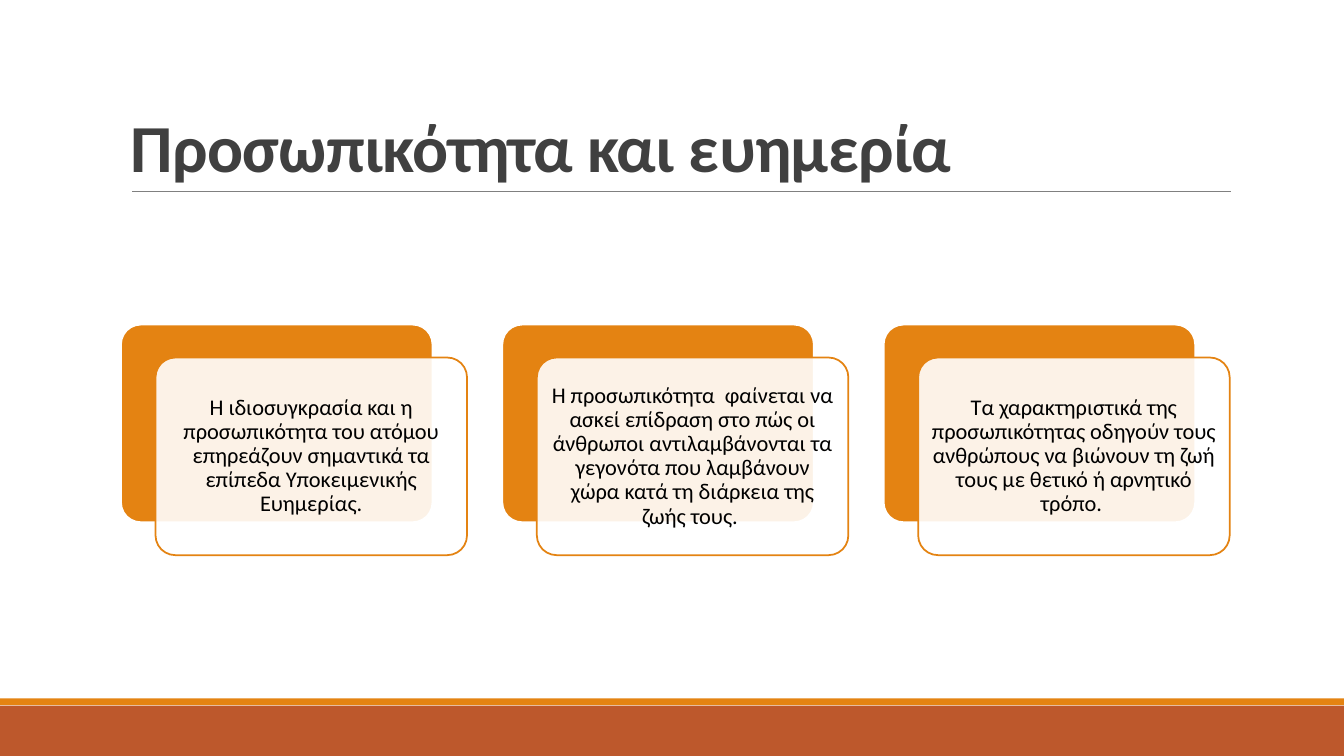
from pptx import Presentation
from pptx.dml.color import RGBColor
from pptx.enum.shapes import MSO_CONNECTOR, MSO_SHAPE
from pptx.enum.text import MSO_ANCHOR, PP_ALIGN
from pptx.oxml.ns import qn
from pptx.util import Cm, Pt
from lxml import etree

RECT, ROUND = MSO_SHAPE.RECTANGLE, MSO_SHAPE.ROUNDED_RECTANGLE
LINE = MSO_CONNECTOR.STRAIGHT
MIDDLE, BOTTOM = MSO_ANCHOR.MIDDLE, MSO_ANCHOR.BOTTOM
CENTER = PP_ALIGN.CENTER
ORANGE, RUST, WHITE = "E48312", "BD582C", "FFFFFF"


def paint(part, color):
    part.fill.solid()
    part.fill.fore_color.rgb = RGBColor.from_string(color)


def add_box(kind, left, top, width, height, fill, edge=None):
    box = slide.shapes.add_shape(kind, Cm(left), Cm(top), Cm(width), Cm(height))
    box.shadow.inherit = False
    paint(box, fill)
    if edge:
        paint(box.line, edge)
        box.line.width = Pt(1.25)
    else:
        box.line.fill.background()
    if kind == ROUND:
        box.adjustments[0] = 0.1
    return box


deck = Presentation()
deck.slide_width, deck.slide_height = Cm(33.87), Cm(19.05)
slide = deck.slides.add_slide(deck.slide_layouts[6])

# Footer bands
add_box(RECT, 0, 17.78, 33.87, 1.27, RUST)
add_box(RECT, 0, 17.6, 33.87, 0.17, ORANGE)

# Rule under the title
rule = slide.shapes.add_connector(LINE, Cm(3.33), Cm(4.83), Cm(31.01), Cm(4.83))
paint(rule.line, "808080")
rule.line.width = Pt(0.5)
etree.SubElement(rule.element.spPr, qn("a:effectLst"))

# Title
title = slide.shapes.add_textbox(Cm(3.05), Cm(0.79), Cm(27.94), Cm(4.04))
frame = title.text_frame
frame.word_wrap = True
frame.vertical_anchor = BOTTOM
para = frame.paragraphs[0]
para.line_spacing = 0.85
run = para.add_run()
run.text = "Προσωπικότητα και ευημερία"
run.font.name = "Calibri"
run.font.size = Pt(48)
run.font.bold = True
paint(run.font, "404040")
run.font._element.set("spc", "-50")

# Cards: an orange back and a translucent front with the text
notes = [
    "Η ιδιοσυγκρασία και η προσωπικότητα του ατόμου επηρεάζουν σημαντικά "
    "τα επίπεδα Υποκειμενικής Ευημερίας.",
    "Η προσωπικότητα  φαίνεται να ασκεί επίδραση στο πώς οι άνθρωποι "
    "αντιλαμβάνονται τα γεγονότα που λαμβάνουν χώρα κατά τη διάρκεια της "
    "ζωής τους. ",
    "Τα χαρακτηριστικά της προσωπικότητας οδηγούν τους ανθρώπους να βιώνουν "
    "τη ζωή τους με θετικό ή αρνητικό τρόπο. ",
]
for i, note in enumerate(notes):
    left = 3.05 + i * 9.61
    add_box(ROUND, left, 8.18, 7.85, 4.98, ORANGE, WHITE)
    card = add_box(ROUND, left + 0.87, 9.01, 7.85, 4.98, WHITE, ORANGE)
    tint = card.element.spPr.find(qn("a:solidFill"))[0]
    etree.SubElement(tint, qn("a:alpha"), val="90000")

    frame = card.text_frame
    frame.word_wrap = True
    frame.vertical_anchor = MIDDLE
    frame.margin_left = frame.margin_right = Cm(0.17)
    frame.margin_top = frame.margin_bottom = Cm(0.17)
    para = frame.paragraphs[0]
    para.alignment = CENTER
    para.line_spacing = 0.9
    run = para.add_run()
    run.text = note
    run.font.name = "Calibri"
    run.font.size = Pt(16)
    paint(run.font, "000000")

deck.save("out.pptx")
